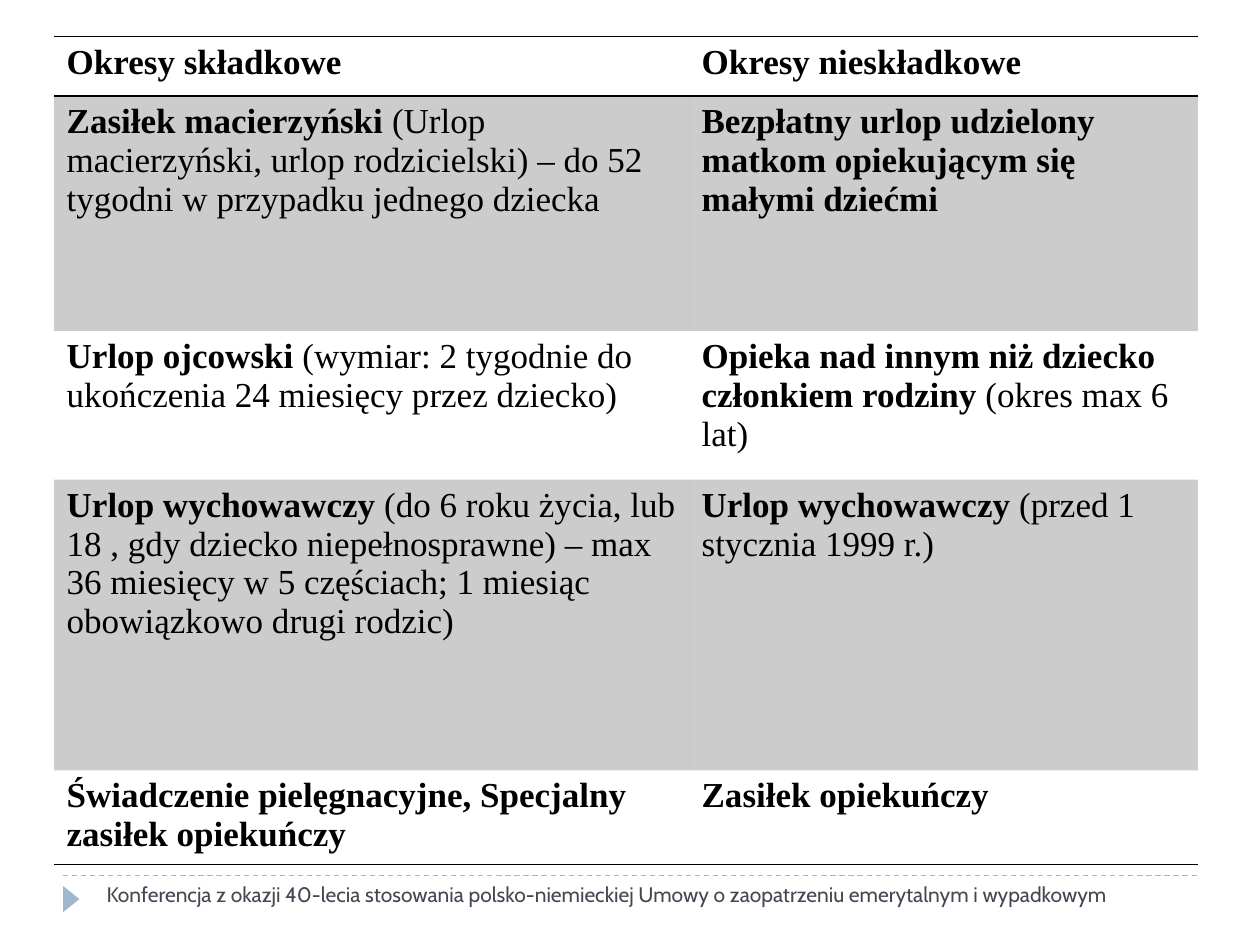
from lxml.etree import SubElement
from pptx import Presentation
from pptx.dml.color import RGBColor
from pptx.enum.dml import MSO_LINE
from pptx.enum.shapes import MSO_CONNECTOR, MSO_SHAPE
from pptx.oxml import parse_xml
from pptx.oxml.ns import nsdecls, qn
from pptx.util import Cm, Pt

NO_GRID = "{2D5ABB26-0587-4C30-8999-92F81FD0307C}"
COLS = (12.8, 10.26)
ROWS = (1.2, 4.73, 3, 5.86, 1.9)
CELLS = (
    (("Okresy składkowe", ""), ("Okresy nieskładkowe", "")),
    (
        ("Zasiłek macierzyński ",
         "(Urlop macierzyński, urlop rodzicielski) – do 52 tygodni w przypadku jednego dziecka"),
        ("Bezpłatny urlop udzielony matkom opiekującym się małymi dziećmi", ""),
    ),
    (
        ("Urlop ojcowski ", "(wymiar: 2 tygodnie do ukończenia 24 miesięcy przez dziecko)"),
        ("Opieka nad innym niż dziecko członkiem rodziny ", "(okres max 6 lat)"),
    ),
    (
        ("Urlop wychowawczy ",
         "(do 6 roku życia, lub 18 , gdy dziecko niepełnosprawne) – max 36 miesięcy "
         "w 5 częściach; 1 miesiąc obowiązkowo drugi rodzic)"),
        ("Urlop wychowawczy ", "(przed 1 stycznia 1999 r.)"),
    ),
    (
        ("Świadczenie pielęgnacyjne, Specjalny zasiłek opiekuńczy", ""),
        ("Zasiłek opiekuńczy", ""),
    ),
)


def color(code):
    return RGBColor.from_string(code)


def write(par, text, font="Times New Roman", size=20, tint="000000", bold=False):
    run = par.add_run()
    run.text = text
    run.font.name = font
    run.font.size = Pt(size)
    run.font.bold = bold
    run.font.color.rgb = color(tint)


class Deck:
    accent = "9FB8CD"
    ink = "000000"
    muted = "464653"

    def __init__(self):
        self.file = Presentation()
        self.file.slide_width = Cm(25.4)
        self.file.slide_height = Cm(19.05)
        self.slide = self.file.slides.add_slide(self.file.slide_layouts[6])
        self.shapes = self.slide.shapes

    def rule(self, left, top, right):
        line = self.shapes.add_connector(
            MSO_CONNECTOR.STRAIGHT, Cm(left), Cm(top), Cm(right), Cm(top))
        line.line.color.rgb = color(self.accent)
        line.line.width = Pt(0.75)
        line.line.dash_style = MSO_LINE.DASH
        SubElement(line._element.spPr, qn("a:effectLst"))

    def arrow(self, left, top, width, height):
        mark = self.shapes.add_shape(
            MSO_SHAPE.ISOSCELES_TRIANGLE, Cm(left), Cm(top), Cm(width), Cm(height))
        mark.rotation = 90
        mark.shadow.inherit = False
        mark.fill.solid()
        mark.fill.fore_color.rgb = color(self.accent)
        mark.line.fill.background()

    def label(self, left, top, width, height, text):
        box = self.shapes.add_textbox(Cm(left), Cm(top), Cm(width), Cm(height))
        box.text_frame.word_wrap = True
        write(box.text_frame.paragraphs[0], text, font="Cabin", size=12, tint=self.muted)

    def shade(self, cell):
        cell.fill.solid()
        cell.fill.fore_color.rgb = color(self.ink)
        tone = cell._tc.tcPr.find(".//" + qn("a:srgbClr"))
        SubElement(tone, qn("a:alpha")).set("val", "20000")

    def border(self, cell, side):
        cell._tc.tcPr.insert(0, parse_xml(
            f'<a:{side} {nsdecls("a")} w="{Pt(1)}"><a:solidFill>'
            f'<a:srgbClr val="{self.ink}"/></a:solidFill></a:{side}>'))

    def table(self, left, top, cols, rows, cells):
        frame = self.shapes.add_table(
            len(rows), len(cols), Cm(left), Cm(top), Cm(sum(cols)), Cm(sum(rows)))
        grid = frame.table
        grid._tbl.tblPr.find(qn("a:tableStyleId")).text = NO_GRID
        for col, width in zip(grid.columns, cols):
            col.width = Cm(width)
        for row, height in zip(grid.rows, rows):
            row.height = Cm(height)
        for i, line in enumerate(cells):
            for j, (head, rest) in enumerate(line):
                cell = grid.cell(i, j)
                par = cell.text_frame.paragraphs[0]
                write(par, head, bold=True)
                if rest:
                    write(par, rest)
                if i % 2:
                    self.shade(cell)
                else:
                    cell.fill.background()
                if i in (0, len(rows) - 1):
                    self.border(cell, "lnB")
                if i == 0:
                    self.border(cell, "lnT")


def main():
    deck = Deck()
    deck.rule(1.27, 17.65, 24.13)
    deck.arrow(1.17, 17.96, 0.53, 0.33)
    deck.table(1.09, 0.74, COLS, ROWS, CELLS)
    deck.label(1.9, 17.65, 22.2, 1.02,
               "Konferencja z okazji 40-lecia stosowania polsko-niemieckiej Umowy "
               "o zaopatrzeniu emerytalnym i wypadkowym")
    deck.file.save("out.pptx")


if __name__ == "__main__":
    main()
